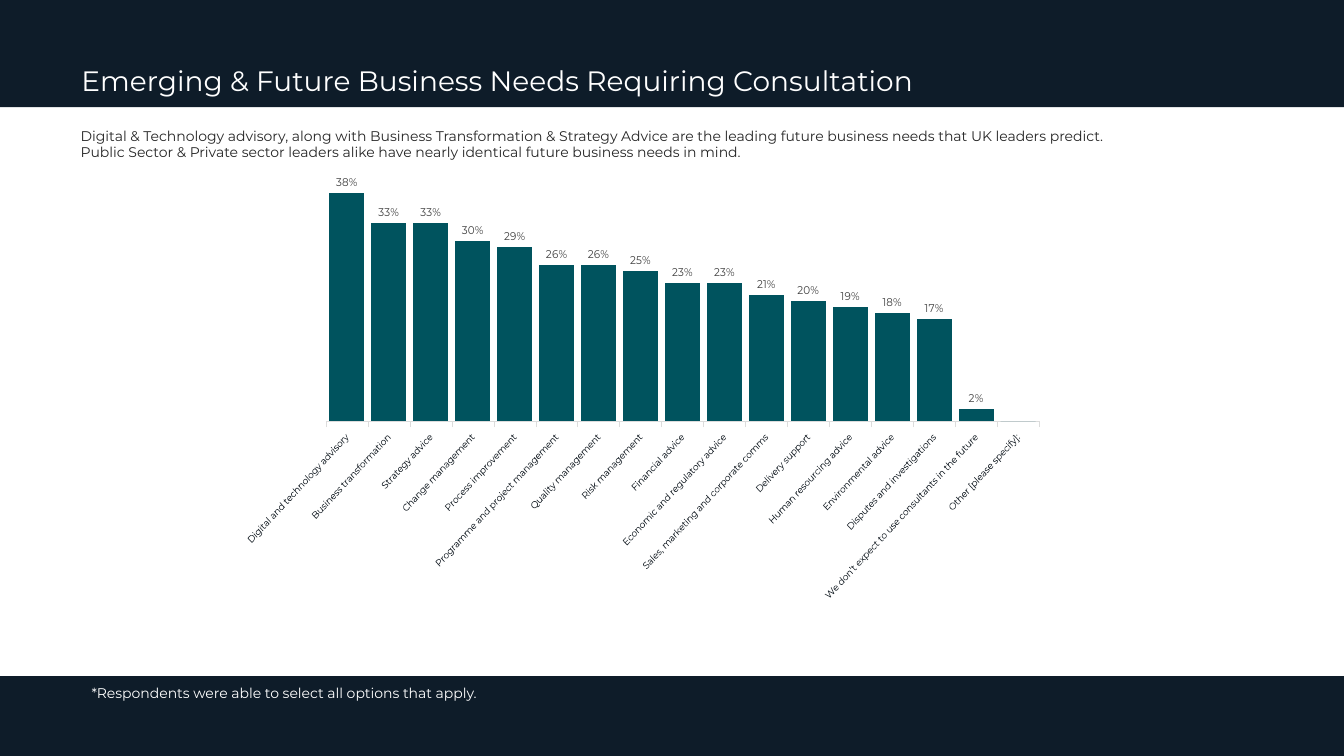
from lxml.etree import SubElement
from pptx import Presentation
from pptx.chart.data import CategoryChartData
from pptx.dml.color import RGBColor
from pptx.enum.chart import XL_CHART_TYPE, XL_LABEL_POSITION, XL_TICK_LABEL_POSITION, XL_TICK_MARK
from pptx.enum.shapes import MSO_SHAPE
from pptx.enum.text import MSO_ANCHOR, MSO_AUTO_SIZE, PP_ALIGN
from pptx.oxml.ns import qn
from pptx.util import Pt

# Content
TITLE = "Emerging & Future Business Needs Requiring Consultation"
SUMMARY = (
    "Digital & Technology advisory, along with Business Transformation & Strategy Advice "
    "are the leading future business needs that UK leaders predict. Public Sector & Private "
    "sector leaders alike have nearly identical future business needs in mind."
)
FOOTNOTE = "*Respondents were able to select all options that apply."
NEEDS = [
    ("Digital and technology advisory", 0.38),
    ("Business transformation", 0.33),
    ("Strategy advice", 0.33),
    ("Change management", 0.30),
    ("Process improvement", 0.29),
    ("Programme and project management", 0.26),
    ("Quality management", 0.26),
    ("Risk management", 0.25),
    ("Financial advice", 0.23),
    ("Economic and regulatory advice", 0.23),
    ("Sales, marketing and corporate comms", 0.21),
    ("Delivery support", 0.20),
    ("Human resourcing advice", 0.19),
    ("Environmental advice", 0.18),
    ("Disputes and investigations", 0.17),
    ("We don’t expect to use consultants in the future", 0.02),
    ("Other [please specify]:", 0),
]
FONT = "Montserrat"
NAVY, TEAL, WHITE = "0E1C29", "00535E", "FFFFFF"
WIDTH, HEIGHT = 960, 540
HEADER_HEIGHT, FOOTER_HEIGHT = 76.5, 57
PLOT_LAYOUT = {"x": 0.019, "y": 0.033, "w": 0.875, "h": 0.467}


def color(value):
    return RGBColor.from_string(value)


def style_font(font, size, value):
    font.name = FONT
    font.size = Pt(size)
    font.color.rgb = color(value)


def place(shape, left, top, width, height):
    shape.left, shape.top, shape.width, shape.height = map(Pt, (left, top, width, height))


def write(shape, text, size, value, margins=None):
    frame = shape.text_frame
    frame.word_wrap = True
    frame.vertical_anchor = MSO_ANCHOR.TOP
    if margins is not None:
        frame.margin_left = frame.margin_right = Pt(margins)
        frame.margin_top = frame.margin_bottom = Pt(margins)
    paragraph = frame.paragraphs[0]
    paragraph.alignment = PP_ALIGN.LEFT
    run = paragraph.add_run()
    run.text = text
    style_font(run.font, size, value)
    return paragraph


presentation = Presentation()
presentation.slide_width, presentation.slide_height = Pt(WIDTH), Pt(HEIGHT)
slide = presentation.slides.add_slide(presentation.slide_layouts[5])
shapes = slide.shapes

# Header and footer bands, behind the title
for top, height in ((0, HEADER_HEIGHT), (HEIGHT - FOOTER_HEIGHT, FOOTER_HEIGHT)):
    band = shapes.add_shape(MSO_SHAPE.RECTANGLE, 0, Pt(top), Pt(WIDTH), Pt(height))
    band.shadow.inherit = False
    band.fill.solid()
    band.fill.fore_color.rgb = color(NAVY)
    band.line.fill.background()
    shapes._spTree.insert(2, band._element)

# Title, summary and footnote
place(shapes.title, 51, 44.5, 694, 40.5)
shapes.title.text_frame.auto_size = MSO_AUTO_SIZE.NONE
write(shapes.title, TITLE, 20, WHITE).line_spacing = 0.9

summary = shapes.add_textbox(Pt(57.6), Pt(90.7), Pt(750), Pt(60))
write(summary, SUMMARY, 10, "262626", margins=0)

footnote = shapes.add_textbox(Pt(58.3), Pt(485.3), Pt(723), Pt(20))
write(footnote, FOOTNOTE, 10, WHITE)
footnote.text_frame.auto_size = MSO_AUTO_SIZE.SHAPE_TO_FIT_TEXT

# Column chart
data = CategoryChartData(number_format="0%")
data.categories = [need for need, share in NEEDS]
data.add_series("Series 1", [share for need, share in NEEDS])
chart = shapes.add_chart(
    XL_CHART_TYPE.COLUMN_CLUSTERED, Pt(175), Pt(117.4), Pt(629), Pt(367), data
).chart
chart.has_legend = False
chart.has_title = False
style_font(chart.font, 8, "000000")

plot = chart.plots[0]
plot.gap_width = 20
plot.vary_by_categories = False
columns = plot.series[0]
columns.format.fill.solid()
columns.format.fill.fore_color.rgb = color(TEAL)

# The number format leaves the zero column unlabelled
labels = columns.data_labels
labels.show_value = True
labels.number_format = "0%;;;"
labels.number_format_is_linked = False
labels.position = XL_LABEL_POSITION.OUTSIDE_END
style_font(labels.font, 8, "404040")

# Axes
value_axis = chart.value_axis
value_axis.visible = False
value_axis.has_major_gridlines = False
value_axis.minimum_scale, value_axis.maximum_scale = 0, 0.4

category_axis = chart.category_axis
category_axis.major_tick_mark = XL_TICK_MARK.OUTSIDE
category_axis.tick_label_position = XL_TICK_LABEL_POSITION.LOW
category_axis.format.line.color.rgb = color("DCDCDC")
category_axis.format.line.width = Pt(0.25)
style_font(category_axis.tick_labels.font, 7, "2C333A")
category_axis._element.find(qn("c:txPr")).find(qn("a:bodyPr")).set("rot", "-2700000")

# Fixed plot area, leaving room for the slanted labels
plot_area = chart._chartSpace.chart.plotArea
layout = plot_area.find(qn("c:layout"))
if layout is None:
    layout = SubElement(plot_area, qn("c:layout"))
    plot_area.insert(0, layout)
manual = SubElement(layout, qn("c:manualLayout"))
settings = {"layoutTarget": "inner", "xMode": "edge", "yMode": "edge", **PLOT_LAYOUT}
for name, setting in settings.items():
    SubElement(manual, qn(f"c:{name}")).set("val", str(setting))

presentation.save("out.pptx")
